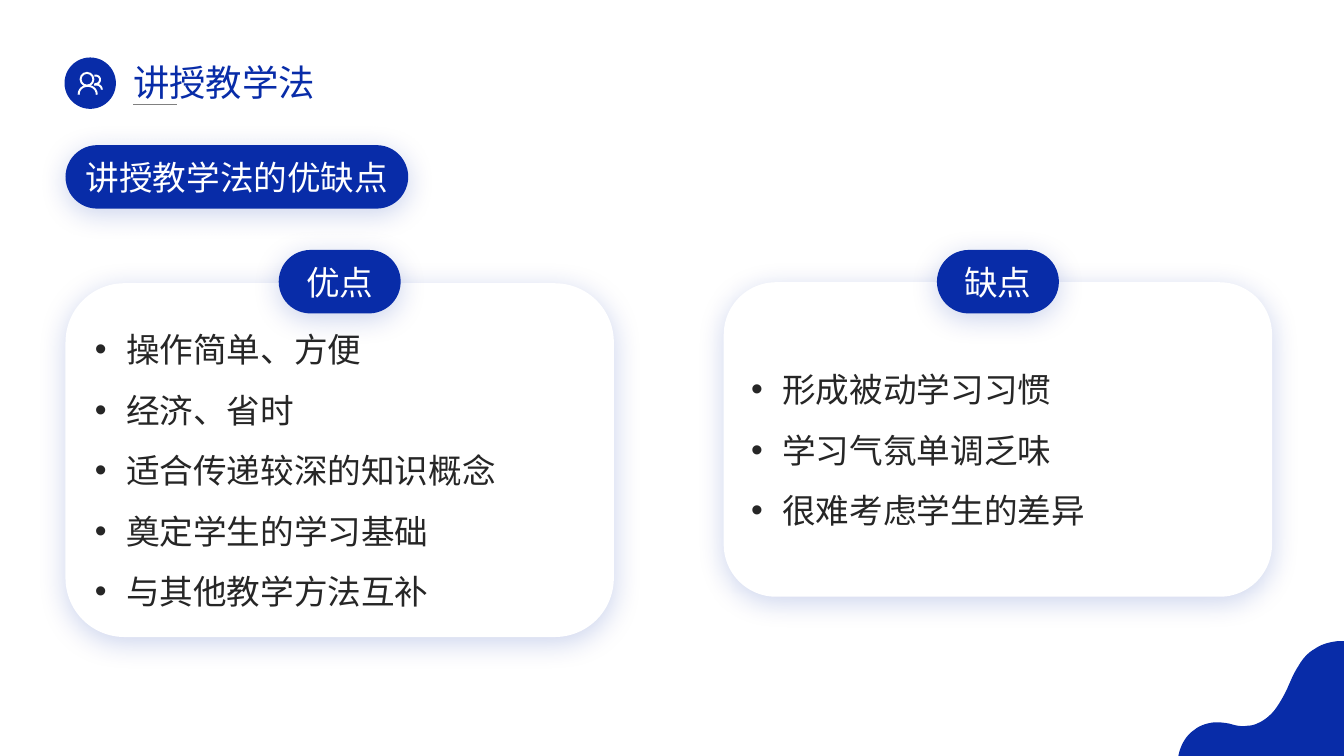
from lxml import etree
from pptx import Presentation
from pptx.dml.color import RGBColor
from pptx.enum.shapes import MSO_CONNECTOR, MSO_SHAPE
from pptx.enum.text import MSO_ANCHOR, MSO_AUTO_SIZE, PP_ALIGN
from pptx.oxml.ns import qn
from pptx.util import Inches, Pt

OVAL, ROUNDED = MSO_SHAPE.OVAL, MSO_SHAPE.ROUNDED_RECTANGLE
STRAIGHT = MSO_CONNECTOR.STRAIGHT
MIDDLE, NO_FIT = MSO_ANCHOR.MIDDLE, MSO_AUTO_SIZE.NONE
LEFT, CENTER = PP_ALIGN.LEFT, PP_ALIGN.CENTER

BLUE = RGBColor(0x08, 0x2C, 0xA8)
WHITE = RGBColor(0xFF, 0xFF, 0xFF)
INK = RGBColor(0x26, 0x26, 0x26)
GRAY = RGBColor(0x80, 0x80, 0x80)
FONT = "Noto Sans CJK SC"

COLUMNS, ROWS = 40, 22.5
MARGIN = 1.95
PILL_HEIGHT = 1.89
CARD_WIDTH = 16.32
LABEL_WIDTH, LABEL_TOP = 3.63, 7.44

WAVE_START = (39.84, 19.08)
WAVE = [
    ((39.57, 19.11), (39.33, 19.17), (39.12, 19.32)),
    ((38.91, 19.44), (38.76, 19.62), (38.64, 19.83)),
    ((38.52, 20.01), (38.43, 20.22), (38.34, 20.43)),
    ((38.25, 20.64), (38.13, 20.85), (38.01, 21.03)),
    ((37.89, 21.21), (37.74, 21.36), (37.53, 21.48)),
    ((37.41, 21.54), (37.29, 21.6), (37.14, 21.6)),
    ((36.96, 21.63), (36.78, 21.6), (36.6, 21.54)),
    ((36.42, 21.51), (36.24, 21.48), (36.06, 21.51)),
    ((35.88, 21.54), (35.7, 21.6), (35.55, 21.72)),
    ((35.28, 21.9), (35.13, 22.2), (35.07, 22.5)),
]
WAVE_CORNERS = [(COLUMNS, ROWS), (COLUMNS, WAVE_START[1])]

ICON_STROKES = [
    ((2.34, 2.82), ((2.34, 2.47), (2.88, 2.47), (2.88, 2.82))),
    ((2.81, 2.25), ((3.03, 2.22), (3.03, 2.52), (2.82, 2.5))),
    ((2.8, 2.52), ((2.95, 2.5), (3.03, 2.58), (3.03, 2.67))),
]

CARDS = [
    ("缺点", 21.54, 8.4, 9.36,
     ["形成被动学习习惯", "学习气氛单调乏味", "很难考虑学生的差异"]),
    ("优点", MARGIN, 8.43, 10.53,
     ["操作简单、方便", "经济、省时", "适合传递较深的知识概念",
      "奠定学生的学习基础", "与其他教学方法互补"]),
]


def curve_points(start, curves, steps=12):
    """Sample a chain of cubic Bezier curves, given as two controls and an end."""
    points = [start]
    for control_1, control_2, end in curves:
        for step in range(1, steps + 1):
            t = step / steps
            weights = ((1 - t) ** 3, 3 * t * (1 - t) ** 2, 3 * t * t * (1 - t), t ** 3)
            corners = (start, control_1, control_2, end)
            points.append(tuple(sum(w * c[axis] for w, c in zip(weights, corners))
                                for axis in (0, 1)))
        start = end
    return points


class SlideBuilder:
    """Draws on one slide, with all lengths in grid columns and rows."""

    def __init__(self, deck):
        self.slide = deck.slides.add_slide(deck.slide_layouts[5])
        self.shapes = self.slide.shapes
        self.column = deck.slide_width / COLUMNS
        self.row = deck.slide_height / ROWS

    def place(self, x, y):
        return round(x * self.column), round(y * self.row)

    def paint(self, shape, fill=None, line=None, weight=1.4):
        shape.shadow.inherit = False
        if fill is None:
            shape.fill.background()
        else:
            shape.fill.solid()
            shape.fill.fore_color.rgb = fill
        if line is None:
            shape.line.fill.background()
        else:
            shape.line.color.rgb = line
            shape.line.width = Pt(weight)

    def glow(self, shape):
        """Give the shape a soft blue shadow below it."""
        effects = shape.element.spPr.find(qn("a:effectLst"))
        shadow = etree.SubElement(effects, qn("a:outerShdw"), blurRad=str(Pt(20)),
                                  dist=str(Pt(4)), dir="5400000", algn="t",
                                  rotWithShape="0")
        color = etree.SubElement(shadow, qn("a:srgbClr"), val=str(BLUE))
        etree.SubElement(color, qn("a:alpha"), val="20000")

    def add_text(self, paragraph, text, size, color, align):
        paragraph.alignment = align
        run = paragraph.add_run()
        run.text = text
        run.font.size = Pt(size)
        run.font.color.rgb = color
        run.font.name = FONT
        etree.SubElement(run.font._element, qn("a:ea"), typeface=FONT)

    def title(self, text, x, y, width, height):
        heading = self.shapes.title
        heading.left, heading.top = self.place(x, y)
        heading.width, heading.height = self.place(width, height)
        frame = heading.text_frame
        frame.auto_size = NO_FIT
        frame.word_wrap = False
        frame.vertical_anchor = MIDDLE
        self.add_text(frame.paragraphs[0], text, 26, BLUE, LEFT)

    def oval(self, x, y, size, fill=None, line=None):
        oval = self.shapes.add_shape(OVAL, *self.place(x, y), *self.place(size, size))
        self.paint(oval, fill, line)

    def outline(self, points, closed=False, fill=None, line=None):
        first, *others = [self.place(*point) for point in points]
        builder = self.shapes.build_freeform(*first, scale=1.0)
        builder.add_line_segments(others, close=closed)
        self.paint(builder.convert_to_shape(), fill, line)

    def rule(self, x, y, width):
        rule = self.shapes.add_connector(STRAIGHT, *self.place(x, y),
                                         *self.place(x + width, y))
        rule.line.color.rgb = GRAY
        rule.line.width = Pt(0.5)
        etree.SubElement(rule.element.spPr, qn("a:effectLst"))

    def panel(self, x, y, width, height, fill):
        panel = self.shapes.add_shape(ROUNDED, *self.place(x, y),
                                      *self.place(width, height))
        self.paint(panel, fill)
        self.glow(panel)
        panel.text_frame.word_wrap = True
        panel.text_frame.vertical_anchor = MIDDLE
        return panel

    def pill(self, text, x, y, width):
        pill = self.panel(x, y, width, PILL_HEIGHT, BLUE)
        pill.adjustments[0] = 0.5
        self.add_text(pill.text_frame.paragraphs[0], text, 24, WHITE, CENTER)

    def card(self, points, x, y, height):
        frame = self.panel(x, y, CARD_WIDTH, height, WHITE).text_frame
        frame.margin_left = frame.margin_right = Inches(0.12)
        for index, point in enumerate(points):
            paragraph = frame.add_paragraph() if index else frame.paragraphs[0]
            self.add_text(paragraph, point, 24, INK, LEFT)
            paragraph.line_spacing = 1.5
            indent = Inches(0.31)
            properties = paragraph._p.get_or_add_pPr()
            properties.set("marL", str(indent))
            properties.set("indent", str(-indent))
            etree.SubElement(properties, qn("a:buFont"), typeface="Arial")
            etree.SubElement(properties, qn("a:buChar"), char="•")


def main():
    deck = Presentation()
    deck.slide_width, deck.slide_height = Inches(13.33), Inches(7.5)
    page = SlideBuilder(deck)

    page.outline(curve_points(WAVE_START, WAVE) + WAVE_CORNERS, closed=True, fill=BLUE)
    page.oval(1.92, 1.71, 1.53, fill=BLUE)
    page.oval(2.4, 2.17, 0.38, line=WHITE)
    for start, curve in ICON_STROKES:
        page.outline(curve_points(start, [curve]), line=WHITE)
    page.rule(3.96, 3.12, 1.32)
    page.title("讲授教学法", 3.66, 1.63, 6.09, 1.62)

    page.pill("讲授教学法的优缺点", MARGIN, 4.32, 10.2)
    for label, left, top, height, points in CARDS:
        page.card(points, left, top, height)
        page.pill(label, left + (CARD_WIDTH - LABEL_WIDTH) / 2, LABEL_TOP, LABEL_WIDTH)

    deck.save("out.pptx")


if __name__ == "__main__":
    main()
